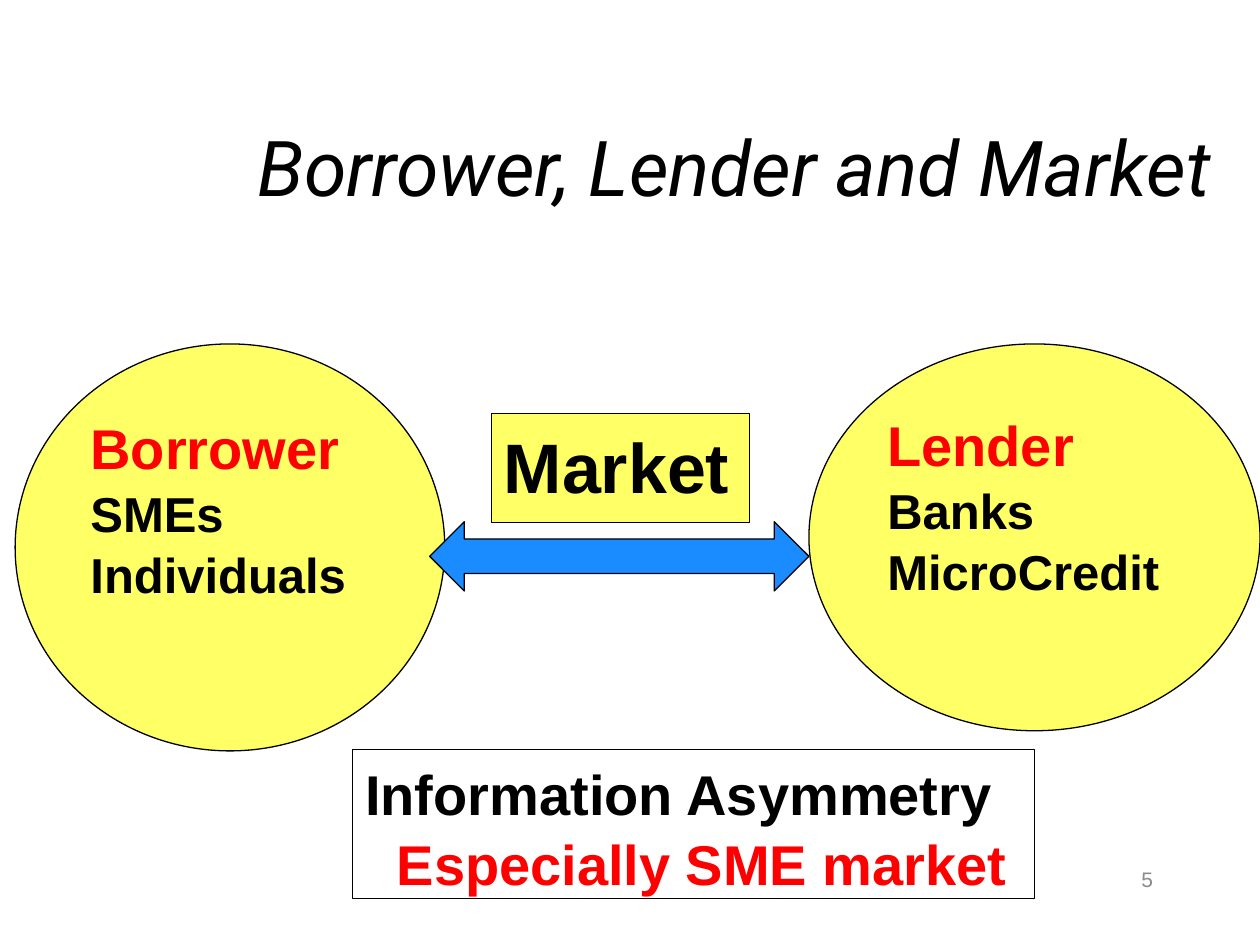
from pptx import Presentation
from pptx.dml.color import RGBColor
from pptx.enum.shapes import MSO_SHAPE as Shape
from pptx.enum.text import MSO_ANCHOR as Anchor, MSO_AUTO_SIZE as AutoSize, PP_ALIGN as Align
from pptx.util import Inches, Pt

BLACK, RED, WHITE = "000000", "FF0000", "FFFFFF"
YELLOW, BLUE, GREY = "FFFF66", "1A8CFF", "898989"


def color(value):
    return RGBColor.from_string(value)


def place(at):
    return [Inches(length) for length in at]


class Page:
    """Holds the slide being built and its text style."""

    font = "Arial"
    title_font = "Roboto"
    line_spacing = 1.05

    def __init__(self, deck):
        self.slide = deck.slides.add_slide(deck.slide_layouts[5])

    def style(self, para, size, shade, name=None, bold=None, italic=None):
        para.font.name = name or self.font
        para.font.size = Pt(size)
        para.font.color.rgb = color(shade)
        para.font.bold = bold
        para.font.italic = italic

    def title(self, text, at):
        box = self.slide.shapes.title
        box.left, box.top, box.width, box.height = place(at)
        frame = box.text_frame
        frame.text = text
        frame.auto_size = AutoSize.NONE
        frame.vertical_anchor = Anchor.MIDDLE
        para = frame.paragraphs[0]
        para.alignment = Align.RIGHT
        para.line_spacing = self.line_spacing
        self.style(para, 44, BLACK, self.title_font, italic=True)

    def number(self, text, at):
        frame = self.slide.shapes.add_textbox(*place(at)).text_frame
        frame.word_wrap = True
        para = frame.paragraphs[0]
        para.text = text
        para.alignment = Align.RIGHT
        self.style(para, 12, GREY)

    def shape(self, kind, at, fill, lines=()):
        """Draw an outlined shape; lines are (text, size, colour, indent)."""
        shape = self.slide.shapes.add_shape(kind, *place(at))
        shape.shadow.inherit = False
        shape.fill.solid()
        shape.fill.fore_color.rgb = color(fill)
        shape.line.color.rgb = color(BLACK)
        shape.line.width = Pt(0.75)
        frame = shape.text_frame
        frame.word_wrap = True
        frame.vertical_anchor = Anchor.TOP
        for index, (text, size, shade, indent) in enumerate(lines):
            para = frame.add_paragraph() if index else frame.paragraphs[0]
            para.text = text
            para.alignment = Align.LEFT
            para.line_spacing = self.line_spacing
            if indent:
                para._p.get_or_add_pPr().set("marL", str(Inches(indent)))
            self.style(para, size, shade, bold=True)

    def party(self, name, members, at):
        lines = [(name, 32, RED, 0)] + [(member, 28, BLACK, 0) for member in members]
        self.shape(Shape.OVAL, at, YELLOW, lines)


def main():
    deck = Presentation()
    deck.slide_width, deck.slide_height = Inches(10), Inches(7.5)
    page = Page(deck)
    page.title("Borrower, Lender and Market", (0.35, 0.67, 9.37, 1.25))
    page.number("5", (7.17, 6.83, 2.08, 0.5))
    page.party("Borrower", ["SMEs", "Individuals"], (0.12, 2.73, 3.41, 3.23))
    page.party("Lender", ["Banks", "MicroCredit"], (6.42, 2.73, 3.58, 3.07))
    page.shape(Shape.LEFT_RIGHT_ARROW, (3.41, 4.14, 3.01, 0.55), BLUE)
    page.shape(Shape.RECTANGLE, (3.9, 3.28, 2.05, 0.87), YELLOW,
               [("Market", 40, BLACK, 0)])
    page.shape(Shape.RECTANGLE, (2.8, 5.95, 5.41, 1.18), WHITE,
               [("Information Asymmetry", 32, BLACK, 0),
                ("Especially SME market", 32, RED, 0.25)])
    deck.save("out.pptx")


if __name__ == "__main__":
    main()
